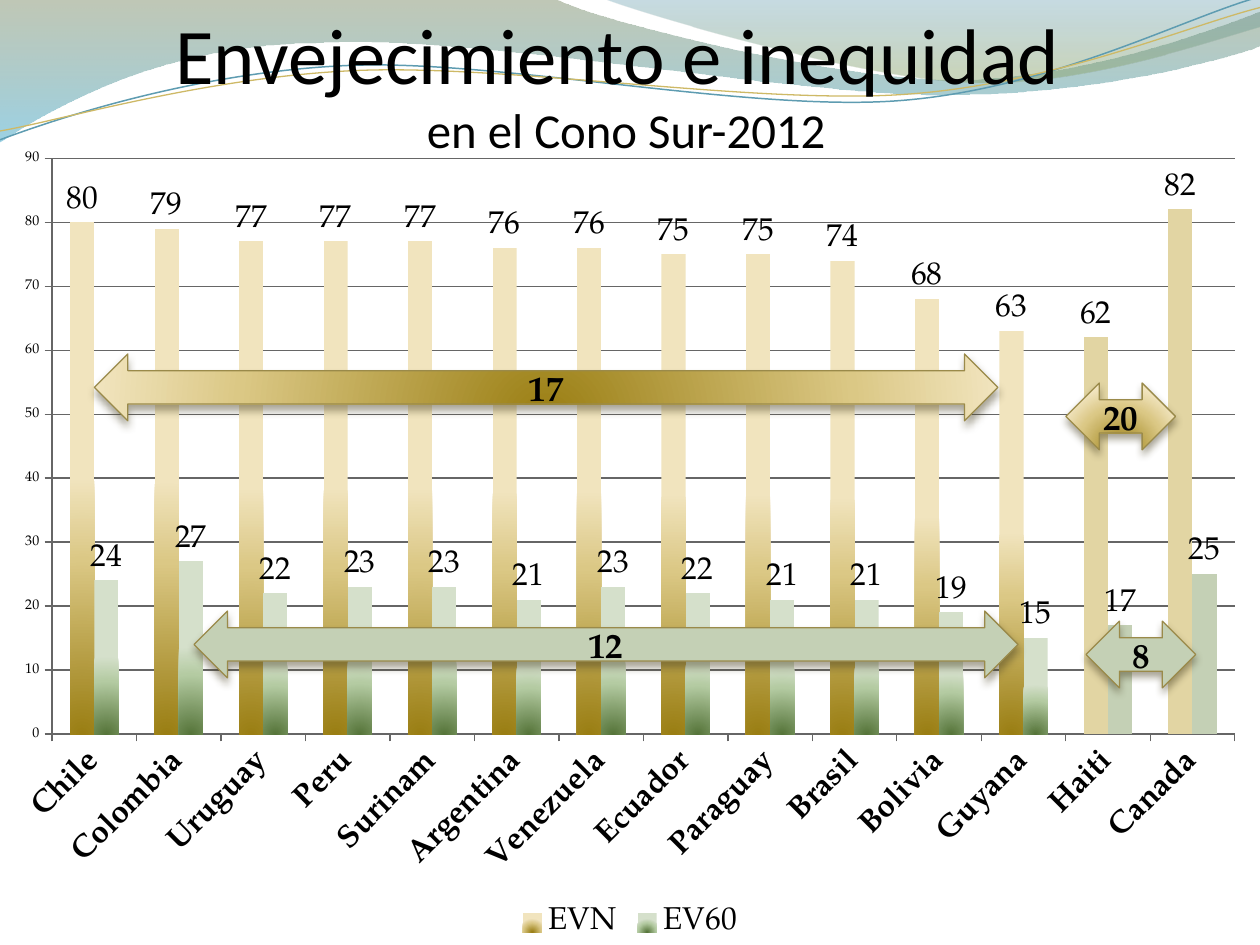
import pptx
import pptx.util
import pptx.dml.color
import pptx.oxml
import pptx.oxml.ns
import pptx.chart.data
import pptx.enum.chart
import pptx.enum.shapes
import pptx.enum.text

NAMESPACES = pptx.oxml.ns.nsdecls("a")
SERIF = "TeX Gyre Pagella"
GOLD = [(0, "9A7E13", 100), (68, "DBC885", 100), (100, "F1E4BE", 100)]
GREEN = [(0, "56753A", 100), (68, "B4CBA2", 100), (100, "D5E0CB", 100)]
GLOW = '<a:path path="circle"><a:fillToRect l="50000" t="130000" r="50000" b="-30000"/></a:path>'
DOWN = '<a:lin ang="5400000" scaled="0"/>'


def paint(fill, color, direction=None):
    fill.solid()
    if direction is None:
        fill.fore_color.rgb = pptx.dml.color.RGBColor.from_string(color)
        return
    stops = "".join(
        f'<a:gs pos="{place * 1000}"><a:srgbClr val="{tone}"><a:alpha val="{opacity * 1000}"/></a:srgbClr></a:gs>'
        for place, tone, opacity in color
    )
    gradient = pptx.oxml.parse_xml(
        f'<a:gradFill {NAMESPACES} rotWithShape="1"><a:gsLst>{stops}</a:gsLst>{direction}</a:gradFill>'
    )
    properties = fill._xPr
    properties.replace(properties.find(pptx.oxml.ns.qn("a:solidFill")), gradient)


def write(paragraph, text, size=20, font=SERIF, bold=False, color="000000"):
    paragraph.alignment = pptx.enum.text.PP_ALIGN.CENTER
    run = paragraph.add_run()
    run.text = text
    run.font.size = pptx.util.Pt(size)
    run.font.name = font
    run.font.bold = bold
    paint(run.font.fill, color)


presentation = pptx.Presentation()
presentation.slide_width = pptx.util.Inches(10)
presentation.slide_height = pptx.util.Inches(7.5)
column = presentation.slide_width // 100
row = presentation.slide_height // 75
slide = presentation.slides.add_slide(presentation.slide_layouts[6])

waves = [
    ([(0, -0.1), (44, -0.1), (47.6, 1.7), (66.4, 6.3), (75.8, 6.3), (85.3, 6.3), (95.8, 2.6), (100, 0.9),
      (100.1, 3.6), (98.3, 4.4), (87, 7.6), (74.6, 7.5), (62.2, 7.5), (38.2, 2.8), (25.7, 3.4),
      (12.9, 3.5), (4.6, 8.3), (-0.1, 11.3)],
     "LCCLCCC", [(0, "74855E", 45), (100, "4AACCE", 55)], None, 0),
    ([(47.9, -0.1), (50.9, 1.1), (68.2, 6.2), (76.9, 6.5), (85.6, 6.9), (96.1, 3.2), (100, 2.1), (100, 0)],
     "CCL", [(0, "45889F", 30), (80, "8AA36D", 45)], None, 0),
    ([(0, 11.1), (4.8, 9.3), (15.8, 5.7), (27.7, 5.2), (39.5, 4.7), (59.3, 8.9), (71.3, 8),
      (83.3, 7.1), (93.8, 1.5), (99.8, -0.2)],
     "CCC", None, "5E9CB1", 0.85),
    ([(0, 10.4), (4.7, 9.6), (16.4, 6.1), (28.3, 5.6), (40.3, 5.1), (59.7, 8.3), (71.7, 7.5),
      (83.6, 6.7), (94.1, 2.1), (100, 0.6)],
     "CCC", None, "CEB966", 0.75),
]
for points, segments, gradient, line_color, line_width in waves:
    points = [(x * column, y * row) for x, y in points]
    builder = slide.shapes.build_freeform(*points[0])
    builder.add_line_segments(points[1:], close=gradient is not None)
    wave = builder.convert_to_shape()
    lines = iter(list(wave._element.iter(pptx.oxml.ns.qn("a:lnTo"))))
    for segment in segments:
        line = next(lines)
        if segment == "C":
            curve = pptx.oxml.parse_xml(f"<a:cubicBezTo {NAMESPACES}/>")
            line.addprevious(curve)
            for part in (line, next(lines), next(lines)):
                curve.append(part[0])
                part.getparent().remove(part)
    wave.shadow.inherit = False
    if gradient:
        paint(wave.fill, gradient, DOWN)
        wave.line.fill.background()
    else:
        wave.fill.background()
        paint(wave.line.fill, line_color)
        wave.line.width = pptx.util.Pt(line_width)

title = slide.shapes.add_textbox(4.3 * column, 0.1 * row, 90.8 * column, 12.5 * row)
frame = title.text_frame
frame.word_wrap = True
frame.vertical_anchor = pptx.enum.text.MSO_ANCHOR.BOTTOM
frame.margin_left = frame.margin_right = frame.margin_bottom = 0
write(frame.paragraphs[0], "Envejecimiento e inequidad ", size=45, font="Calibri")
frame.paragraphs[0].add_line_break()
write(frame.paragraphs[0], "en el Cono Sur-2012", size=27.9, font="Calibri")

data = pptx.chart.data.CategoryChartData()
data.categories = ["Chile", "Colombia", "Uruguay", "Peru", "Surinam", "Argentina", "Venezuela",
                   "Ecuador", "Paraguay", "Brasil", "Bolivia", "Guyana", "Haiti", "Canada"]
data.add_series("EVN", [80, 79, 77, 77, 77, 76, 76, 75, 75, 74, 68, 63, 62, 82])
data.add_series("EV60", [24, 27, 22, 23, 23, 21, 23, 22, 21, 21, 19, 15, 17, 25])
chart = slide.shapes.add_chart(
    pptx.enum.chart.XL_CHART_TYPE.COLUMN_CLUSTERED, 0, 10.7 * row, 100 * column, 64.3 * row, data
).chart
chart.has_title = False
chart.font.size = pptx.util.Pt(18)
chart.font.name = SERIF
paint(chart.font.fill, "000000")
chart.has_legend = True
chart.legend.position = pptx.enum.chart.XL_LEGEND_POSITION.BOTTOM
chart.legend.include_in_layout = False

plot = chart.plots[0]
plot.gap_width = 150
plot.overlap = 0
plot.vary_by_categories = False
for series, gradient, plain in zip(plot.series, (GOLD, GREEN), ("E2D5A3", "C4D0B5")):
    paint(series.format.fill, gradient, GLOW)
    for outsider in (12, 13):
        paint(series.points[outsider].format.fill, plain)
    labels = series.data_labels
    labels.show_value = True
    labels.position = pptx.enum.chart.XL_LABEL_POSITION.OUTSIDE_END

value_axis, category_axis = chart.value_axis, chart.category_axis
value_axis.minimum_scale, value_axis.maximum_scale, value_axis.major_unit = 0, 90, 10
value_axis.has_major_gridlines = True
value_axis.tick_labels.font.size = pptx.util.Pt(8)
category_axis.tick_labels.font.bold = True
category_axis.tick_labels.font.size = pptx.util.Pt(18)
category_axis._element.txPr.bodyPr.set("rot", "-2700000")
for axis in (value_axis, category_axis):
    axis.major_tick_mark = pptx.enum.chart.XL_TICK_MARK.OUTSIDE
for line in (value_axis.format.line, category_axis.format.line, value_axis.major_gridlines.format.line):
    paint(line.fill, "666666")
    line.width = pptx.util.Pt(0.75)

arrows = [
    ("17", 7.5, 28.1, 71.7, GOLD, GLOW),
    ("12", 15.4, 48.5, 65.4, "C4D0B5", None),
    ("20", 84.6, 30.4, 8.7, GOLD, GLOW),
    ("8", 86.2, 49.3, 8.7, "C4D0B5", None),
]
for gap, left, top, width, color, direction in arrows:
    arrow = slide.shapes.add_shape(
        pptx.enum.shapes.MSO_SHAPE.LEFT_RIGHT_ARROW, left * column, top * row, width * column, 5.3 * row
    )
    paint(arrow.fill, color, direction)
    paint(arrow.line.fill, "9A8A4A")
    arrow.line.width = pptx.util.Pt(0.75)
    arrow.shadow.inherit = False
    arrow._element.spPr.find(pptx.oxml.ns.qn("a:effectLst")).append(pptx.oxml.parse_xml(
        f'<a:outerShdw {NAMESPACES} blurRad="57150" dist="38100" dir="5400000" rotWithShape="0">'
        '<a:srgbClr val="494123"><a:alpha val="48000"/></a:srgbClr></a:outerShdw>'
    ))
    arrow.text_frame.word_wrap = False
    arrow.text_frame.vertical_anchor = pptx.enum.text.MSO_ANCHOR.MIDDLE
    write(arrow.text_frame.paragraphs[0], gap, bold=True)

presentation.save("out.pptx")
